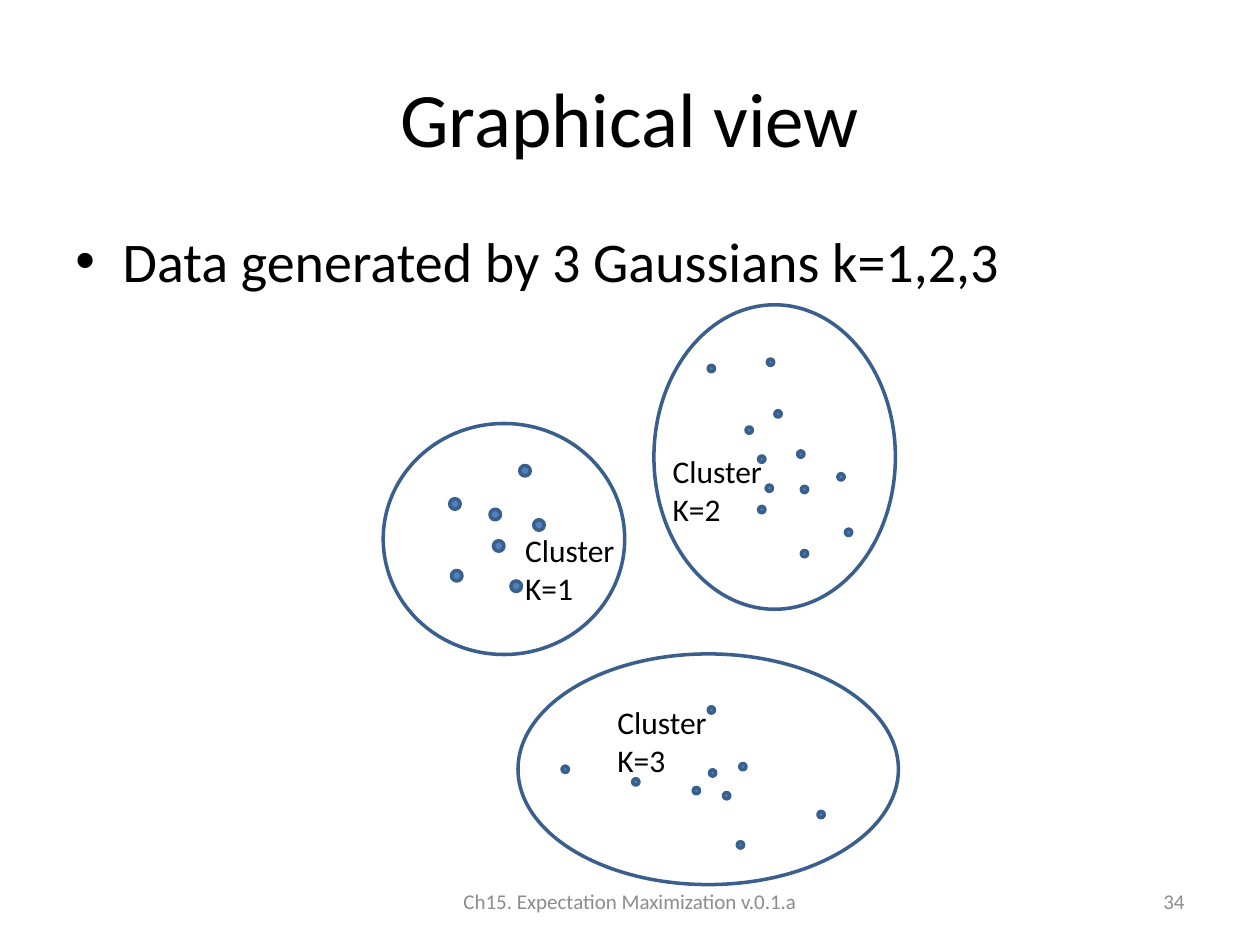
from lxml import etree
from pptx import Presentation
from pptx.dml.color import RGBColor
from pptx.enum import shapes, text
from pptx.oxml import ns
from pptx.util import Pt

BLACK = RGBColor(0x00, 0x00, 0x00)
GREY = RGBColor(0x8C, 0x8C, 0x8C)
BLUE = RGBColor(0x4F, 0x81, 0xBD)
OUTLINE = RGBColor(0x3A, 0x5F, 0x8C)
FONT = "Calibri"

# Boxes are left, top, width, height; dots and labels are offsets in their cluster.
CLUSTERS = [
    {"label": "K=3", "box": (296, 373.7, 217.4, 131.8), "label_at": (49.7, 24.5),
     "dot_size": 3.6,
     "dots": [(108.7, 30.2), (25.2, 64.1), (65.5, 71.3), (100.1, 76.3), (109.4, 66.2),
              (117.4, 79.2), (126.7, 62.6), (125.3, 107.3), (171.4, 90)]},
    {"label": "K=1", "box": (219, 242, 138, 132), "label_at": (74, 58),
     "dot_size": 6,
     "dots": [(38, 43), (61, 49), (86, 55), (78, 24), (39, 84), (63, 67), (73, 90)]},
    {"label": "K=2", "box": (373.7, 174.2, 138, 174), "label_at": (3.6, 80.6),
     "dot_size": 3.6,
     "dots": [(31, 34.6), (59.8, 86.4), (52.6, 69.8), (69.1, 60.5), (82.1, 83.5),
              (64.1, 103), (84.2, 103.7), (84.2, 140.4), (109.4, 128.2),
              (59.8, 115.2), (64.8, 31), (105.1, 96.5)]},
]


def format_paragraph(p, size, color=BLACK, align=text.PP_ALIGN.LEFT):
    p.alignment = align
    p.font.name = FONT
    p.font.size = Pt(size)
    p.font.color.rgb = color


def add_text(slide, box, lines, size, color=BLACK, align=text.PP_ALIGN.LEFT,
             anchor=text.MSO_ANCHOR.TOP, wrap=True):
    tf = slide.shapes.add_textbox(*map(Pt, box)).text_frame
    tf.word_wrap = wrap
    tf.vertical_anchor = anchor
    tf.text = "\n".join(lines)
    for p in tf.paragraphs:
        format_paragraph(p, size, color, align)
    return tf


def add_ellipse(slide, box, fill=None):
    sp = slide.shapes.add_shape(shapes.MSO_SHAPE.OVAL, *map(Pt, box))
    sp.shadow.inherit = False
    if fill is None:
        sp.fill.background()
    else:
        sp.fill.solid()
        sp.fill.fore_color.rgb = fill
    sp.line.color.rgb = OUTLINE
    sp.line.width = Pt(2)


def add_title(slide, box):
    title = slide.shapes.title
    title.left, title.top, title.width, title.height = map(Pt, box)
    tf = title.text_frame
    tf.text = "Graphical view"
    tf.vertical_anchor = text.MSO_ANCHOR.MIDDLE
    format_paragraph(tf.paragraphs[0], 44, align=text.PP_ALIGN.CENTER)


def add_body(slide, box):
    tf = add_text(slide, box, ["Data generated by 3 Gaussians k=1,2,3"], 32)
    p = tf.paragraphs[0]
    p.space_before = Pt(6.4)
    # Hanging bullet
    pPr = p._p.get_or_add_pPr()
    pPr.set("marL", str(Pt(27)))
    pPr.set("indent", str(Pt(-27)))
    font = etree.Element(ns.qn("a:buFont"), typeface="Arial")
    bullet = etree.Element(ns.qn("a:buChar"), char="•")
    pPr.find(ns.qn("a:defRPr")).addprevious(font)
    font.addnext(bullet)


def add_cluster(slide, box, label, label_at, dot_size, dots):
    left, top = box[:2]
    add_ellipse(slide, box)
    for x, y in dots:
        add_ellipse(slide, (left + x, top + y, dot_size, dot_size), BLUE)
    x, y = label_at
    add_text(slide, (left + x, top + y, 66, 51), ["Cluster", label], 18, wrap=False)


def add_footer(slide, box):
    left, top, width, height = box
    middle = text.MSO_ANCHOR.MIDDLE
    add_text(slide, (left + (width - 228) / 2, top, 228, height),
             ["Ch15. Expectation Maximization v.0.1.a"], 12, GREY,
             text.PP_ALIGN.CENTER, middle)
    add_text(slide, (left + width - 168, top, 168, height), ["34"], 12, GREY,
             text.PP_ALIGN.RIGHT, middle)


def main():
    prs = Presentation()
    prs.slide_width, prs.slide_height = Pt(720), Pt(540)
    slide = prs.slides.add_slide(prs.slide_layouts[5])
    add_title(slide, (36, 21.6, 648, 90))
    add_body(slide, (36, 126, 648, 356.4))
    add_footer(slide, (36, 500.5, 648, 28.8))
    for cluster in CLUSTERS:
        add_cluster(slide, **cluster)
    prs.save("out.pptx")


if __name__ == "__main__":
    main()
